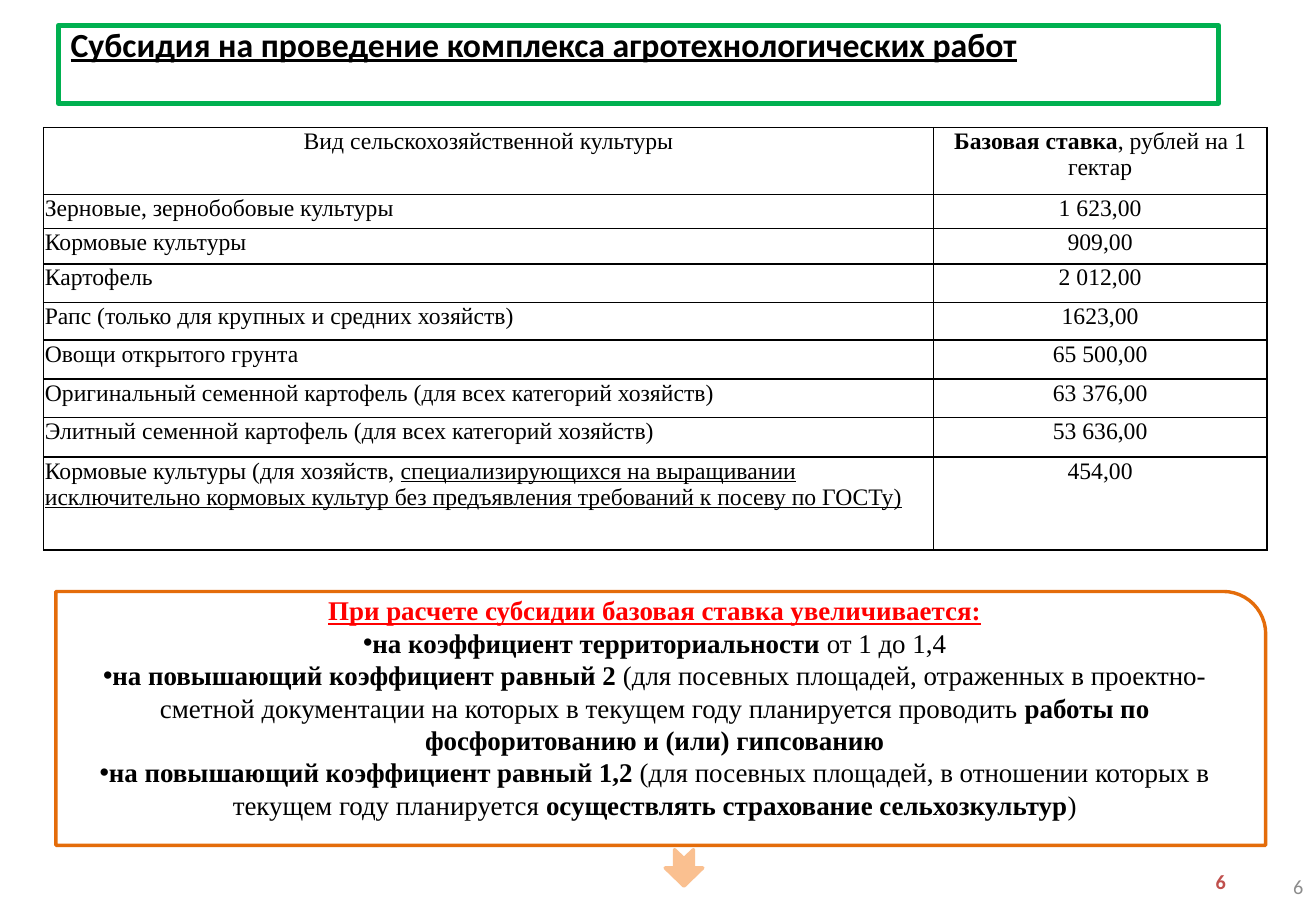
from lxml import etree
from pptx import Presentation
from pptx.dml import color
from pptx.enum import shapes, text
from pptx.oxml import ns
from pptx.util import Pt

SERIF = "Times New Roman"
SANS = "Calibri"
BLACK, WHITE = "000000", "FFFFFF"
CENTER, LEFT, RIGHT = text.PP_ALIGN.CENTER, text.PP_ALIGN.LEFT, text.PP_ALIGN.RIGHT
TOP, MIDDLE = text.MSO_ANCHOR.TOP, text.MSO_ANCHOR.MIDDLE

RATES = [
    ([("Вид сельскохозяйственной культуры", "")],
     [("Базовая ставка", "b"), (", рублей на 1 гектар", "")], 39.6),
    ([("Зерновые, зернобобовые культуры", "")], [("1 623,00", "")], 20.2),
    ([("Кормовые культуры", "")], [("909,00", "")], 21),
    ([("Картофель", "")], [("2 012,00", "")], 22.9),
    ([("Рапс (только для крупных и средних хозяйств)", "")], [("1623,00", "")], 22.4),
    ([("Овощи открытого грунта", "")], [("65 500,00", "")], 23),
    ([("Оригинальный семенной картофель (для всех категорий хозяйств)", "")],
     [("63 376,00", "")], 23),
    ([("Элитный семенной картофель (для всех категорий хозяйств)", "")],
     [("53 636,00", "")], 23.2),
    ([("Кормовые культуры (для хозяйств, ", ""),
      ("специализирующихся на выращивании исключительно кормовых культур "
       "без предъявления требований к посеву по ГОСТу)", "u")],
     [("454,00", "")], 55.3),
]

COEFFICIENTS = [
    [("на коэффициент территориальности ", "b"), ("от 1 до 1,4", "")],
    [("на повышающий коэффициент равный 2 ", "b"),
     ("(для посевных площадей, отраженных в проектно-сметной документации "
      "на которых в текущем году планируется проводить ", ""),
     ("работы по фосфоритованию и (или) гипсованию", "b")],
    [("на повышающий коэффициент равный 1,2 ", "b"),
     ("(для посевных площадей, в отношении которых в текущем году планируется ", ""),
     ("осуществлять страхование сельхозкультур", "b"), (")", "")],
]


def rgb(value):
    return color.RGBColor.from_string(value)


def place(item, left, top, width, height):
    item.left, item.top, item.width, item.height = Pt(left), Pt(top), Pt(width), Pt(height)


def outline(item, line_color, width):
    item.line.color.rgb = rgb(line_color)
    item.line.width = Pt(width)


def prepare_frame(frame, anchor, left=7.2, top=3.6, right=7.2, bottom=3.6):
    frame.word_wrap = True
    frame.auto_size = text.MSO_AUTO_SIZE.NONE
    frame.vertical_anchor = anchor
    frame.margin_left, frame.margin_top = Pt(left), Pt(top)
    frame.margin_right, frame.margin_bottom = Pt(right), Pt(bottom)


def write(paragraph, runs, size, font, ink=BLACK, align=LEFT):
    paragraph.alignment = align
    paragraph.space_before = Pt(0)
    for words, style in runs:
        run = paragraph.add_run()
        run.text = words
        run.font.size = Pt(size)
        run.font.name = font
        run.font.color.rgb = rgb(ink)
        run.font.bold = "b" in style
        run.font.underline = "u" in style


def set_bullet(paragraph, mark=None):
    props = paragraph._p.get_or_add_pPr()
    props.set("marL", "0")
    props.set("indent", "0")
    if mark:
        etree.SubElement(props, ns.qn("a:buFont")).set("typeface", "Arial")
        etree.SubElement(props, ns.qn("a:buChar")).set("char", mark)
    else:
        etree.SubElement(props, ns.qn("a:buNone"))


def set_borders(cell, line_color, width):
    props = cell._tc.get_or_add_tcPr()
    for position, side in enumerate(("lnL", "lnR", "lnT", "lnB")):
        border = etree.Element(ns.qn("a:" + side), w=str(Pt(width)))
        fill = etree.SubElement(border, ns.qn("a:solidFill"))
        etree.SubElement(fill, ns.qn("a:srgbClr")).set("val", line_color)
        props.insert(position, border)


def fill_title(heading):
    place(heading, 34.6, 15.1, 687.6, 46.1)
    heading.fill.solid()
    heading.fill.fore_color.rgb = rgb(WHITE)
    outline(heading, "00B050", 3)
    prepare_frame(heading.text_frame, TOP)
    paragraph = heading.text_frame.paragraphs[0]
    paragraph.line_spacing = 0.8
    write(paragraph, [("Субсидия на проведение комплекса агротехнологических работ", "bu")],
          20, SANS)


def add_rates(slide):
    frame = slide.shapes.add_table(len(RATES), 2, Pt(25.9), Pt(75.6), Pt(725), Pt(250.6))
    table = frame.table
    table.first_row = table.horz_banding = False
    for column, width in zip(table.columns, (527.4, 197.6)):
        column.width = Pt(width)
    for index, (crop, rate, height) in enumerate(RATES):
        table.rows[index].height = Pt(height)
        for column, runs in enumerate((crop, rate)):
            cell = table.cell(index, column)
            cell.fill.solid()
            cell.fill.fore_color.rgb = rgb(WHITE)
            cell.margin_left = cell.margin_top = cell.margin_right = Pt(0.7)
            cell.margin_bottom = Pt(0)
            align = CENTER if column or index == 0 else LEFT
            write(cell.text_frame.paragraphs[0], runs, 14, SERIF, align=align)
            set_borders(cell, BLACK, 1)


def add_shape(slide, kind, bounds, line_color, fill=None):
    shape = slide.shapes.add_shape(kind, *map(Pt, bounds))
    shape.shadow.inherit = False
    outline(shape, line_color, 2)
    if fill:
        shape.fill.solid()
        shape.fill.fore_color.rgb = rgb(fill)
    else:
        shape.fill.background()
    return shape


def fill_coefficients(body):
    place(body, 33.1, 350.6, 709.8, 150.5)
    frame = body.text_frame
    prepare_frame(frame, TOP, top=1.5)
    lead = frame.paragraphs[0]
    write(lead, [("При расчете субсидии базовая ставка увеличивается:", "bu")],
          16, SERIF, "FF0000", CENTER)
    set_bullet(lead)
    for runs in COEFFICIENTS:
        paragraph = frame.add_paragraph()
        write(paragraph, runs, 16, SERIF, align=CENTER)
        set_bullet(paragraph, "•")


def add_page_number(slide, bounds, ink, style):
    box = slide.shapes.add_textbox(*map(Pt, bounds))
    prepare_frame(box.text_frame, MIDDLE)
    write(box.text_frame.paragraphs[0], [("6", style)], 12, SANS, ink, RIGHT)


def main():
    deck = Presentation()
    deck.slide_width, deck.slide_height = Pt(780), Pt(540)
    slide = deck.slides.add_slide(deck.slide_layouts[1])
    add_page_number(slide, (702, 514.1, 31.7, 17.3), "C0504D", "b")
    add_page_number(slide, (558.7, 511.2, 221, 28.8), "8C8C8C", "")
    fill_title(slide.shapes.title)
    add_rates(slide)
    add_shape(slide, shapes.MSO_SHAPE.ROUND_1_RECTANGLE, (33.1, 350.6, 717.1, 150.5), "E46C0A")
    fill_coefficients(slide.placeholders[1])
    arrow = add_shape(slide, shapes.MSO_SHAPE.NOTCHED_RIGHT_ARROW,
                      (394.6, 503.3, 21.6, 22.3), "FAC090", "FAC090")
    arrow.rotation = 90
    deck.save("out.pptx")


if __name__ == "__main__":
    main()
